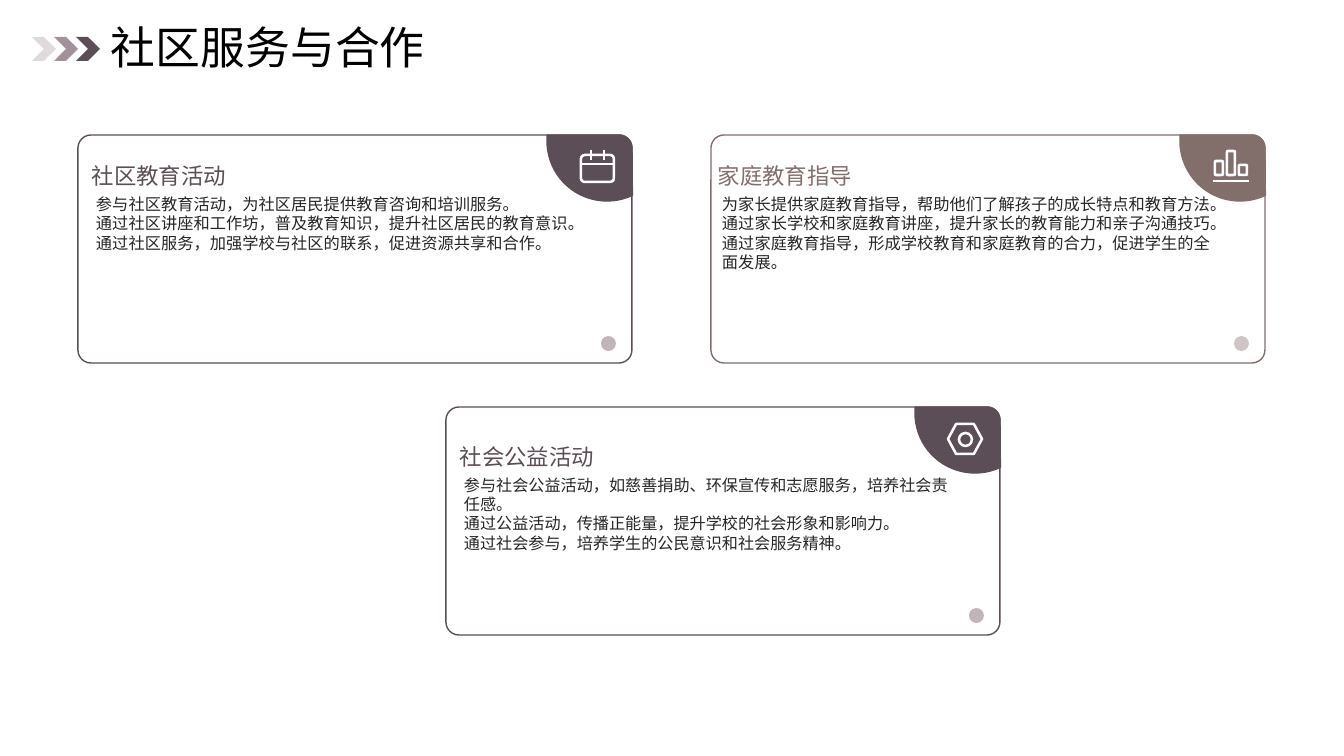
from dataclasses import dataclass
from math import cos, radians, sin

from lxml import etree
from pptx import Presentation
from pptx.dml.color import RGBColor
from pptx.enum.shapes import MSO_CONNECTOR, MSO_SHAPE
from pptx.enum.text import MSO_ANCHOR, MSO_AUTO_SIZE, PP_ALIGN
from pptx.oxml.ns import qn
from pptx.util import Pt

RECT, ROUND, OVAL = MSO_SHAPE.RECTANGLE, MSO_SHAPE.ROUNDED_RECTANGLE, MSO_SHAPE.OVAL
CHEVRON, HEXAGON = MSO_SHAPE.CHEVRON, MSO_SHAPE.HEXAGON
STRAIGHT = MSO_CONNECTOR.STRAIGHT
TOP, MIDDLE, BOTTOM = MSO_ANCHOR.TOP, MSO_ANCHOR.MIDDLE, MSO_ANCHOR.BOTTOM
LEFT, NO_FIT = PP_ALIGN.LEFT, MSO_AUTO_SIZE.NONE

EMU_PER_PX = 914400 / 100.8
CARD_W, CARD_H, RADIUS = 554, 228, 13
COMPARISON_LAYOUT = 4


@dataclass(frozen=True)
class Theme:
    font: str = "Noto Sans CJK SC"
    black: str = "000000"
    text: str = "262626"
    white: str = "FFFFFF"
    plum: str = "5C4E56"
    plum_mid: str = "A1919A"
    plum_soft: str = "C1B5BC"
    plum_pale: str = "E0DADD"
    brown: str = "826F6C"
    brown_soft: str = "CEC5C4"
    title_pt: float = 32
    heading_pt: float = 16
    body_pt: float = 11.6
    body_small_pt: float = 11.5
    border_pt: float = 1
    icon_pt: float = 1.8


THEME = Theme()


def px(n):
    return round(n * EMU_PER_PX)


def rgb(color):
    return RGBColor.from_string(color)


def paint(sp, fill=None, line=None, width=THEME.border_pt):
    sp.shadow.inherit = False
    if fill:
        sp.fill.solid()
        sp.fill.fore_color.rgb = rgb(fill)
    else:
        sp.fill.background()
    if line:
        sp.line.color.rgb = rgb(line)
        sp.line.width = Pt(width)
    else:
        sp.line.fill.background()


def add_shape(s, kind, box, fill=None, line=None, width=THEME.border_pt, adjust=None):
    sp = s.shapes.add_shape(kind, *map(px, box))
    paint(sp, fill, line, width)
    if adjust is not None:
        sp.adjustments[0] = adjust


def add_stroke(s, x1, y1, x2, y2):
    line = s.shapes.add_connector(STRAIGHT, px(x1), px(y1), px(x2), px(y2))
    line.line.color.rgb = rgb(THEME.white)
    line.line.width = Pt(THEME.icon_pt)
    etree.SubElement(line.element.spPr, qn("a:effectLst"))


def write(s, sp, box, lines, size, color, anchor):
    """Place a text shape on top and fill it, one paragraph per line."""
    sp.left, sp.top, sp.width, sp.height = map(px, box)
    s.shapes.element.append(sp.element)
    tf = sp.text_frame
    frame_format = {"word_wrap": True, "auto_size": NO_FIT, "vertical_anchor": anchor,
                    "margin_left": 0, "margin_top": 0, "margin_right": 0, "margin_bottom": 0}
    for name, value in frame_format.items():
        setattr(tf, name, value)
    tf.text = "\n".join(lines)
    for p in tf.paragraphs:
        for name, value in {"alignment": LEFT, "space_before": Pt(0), "line_spacing": 1.0}.items():
            setattr(p, name, value)
        pPr = p._p.get_or_add_pPr()
        pPr.set("marL", "0")
        pPr.set("indent", "0")
        etree.SubElement(pPr, qn("a:buNone"))
        for r in p.runs:
            for name, value in {"size": Pt(size), "bold": False, "name": THEME.font}.items():
                setattr(r.font, name, value)
            r.font.color.rgb = rgb(color)
            etree.SubElement(r._r.get_or_add_rPr(), qn("a:ea"), typeface=THEME.font)


def arc(cx, cy, radius, start, end, steps=24):
    angles = [radians(start + (end - start) * i / steps) for i in range(steps + 1)]
    return [(cx + radius * cos(a), cy + radius * sin(a)) for a in angles]


def add_corner(s, x, y, color):
    """Top right badge: the part of a disc that lies inside the card."""
    outline = [(469, 0)]
    outline += arc(CARD_W - RADIUS, RADIUS, RADIUS, -90, 0)
    outline += arc(529, 6, 60, 65, 180)
    points = [(px(x + dx), px(y + dy)) for dx, dy in outline]
    builder = s.shapes.build_freeform(*points[0])
    builder.add_line_segments(points[1:], close=True)
    paint(builder.convert_to_shape(), color, color)


def add_outline(s, kind, box, adjust=None):
    add_shape(s, kind, box, None, THEME.white, THEME.icon_pt, adjust)


def calendar_icon(s, x, y):
    add_outline(s, ROUND, (x + 503, y + 20, 33, 27), 0.14)
    add_stroke(s, x + 503, y + 29, x + 536, y + 29)
    for tick in (513, 526):
        add_stroke(s, x + tick, y + 15, x + tick, y + 25)


def bars_icon(s, x, y):
    for i, height in enumerate((14, 24, 10)):
        add_outline(s, ROUND, (x + 504 + 12 * i, y + 40 - height, 8, height), 0.1)
    add_stroke(s, x + 502, y + 46, x + 538, y + 46)


def nut_icon(s, x, y):
    add_outline(s, HEXAGON, (x + 502, y + 17, 34, 30), 0.27)
    add_outline(s, OVAL, (x + 513, y + 26, 13, 13))


def add_card(s, body, x, y, indent, drop, color, dot, icon, heading, lines, size):
    add_shape(s, ROUND, (x, y, CARD_W, CARD_H), THEME.white, color, adjust=RADIUS / CARD_H)
    add_corner(s, x, y, color)
    icon(s, x, y)
    add_shape(s, OVAL, (x + 523, y + 201, 15, 15), dot)
    left, top = x + indent, y + drop
    box = s.shapes.add_textbox(0, 0, 0, 0)
    write(s, box, (left, top, 433, 51), [heading], THEME.heading_pt, color, BOTTOM)
    write(s, body, (left + 4, top + 56, 494, 150), lines, size, THEME.text, TOP)


CARDS = [
    (78, 135, 14, 3, THEME.plum, THEME.plum_soft, calendar_icon, "社区教育活动",
     ["参与社区教育活动，为社区居民提供教育咨询和培训服务。",
      "通过社区讲座和工作坊，普及教育知识，提升社区居民的教育意识。",
      "通过社区服务，加强学校与社区的联系，促进资源共享和合作。"], THEME.body_pt),
    (711, 135, 7, 3, THEME.brown, THEME.brown_soft, bars_icon, "家庭教育指导",
     ["为家长提供家庭教育指导，帮助他们了解孩子的成长特点和教育方法。",
      "通过家长学校和家庭教育讲座，提升家长的教育能力和亲子沟通技巧。",
      "通过家庭教育指导，形成学校教育和家庭教育的合力，促进学生的全面发展。"], THEME.body_pt),
    (446, 407, 14, 12, THEME.plum, THEME.plum_soft, nut_icon, "社会公益活动",
     ["参与社会公益活动，如慈善捐助、环保宣传和志愿服务，培养社会责任感。",
      "通过公益活动，传播正能量，提升学校的社会形象和影响力。",
      "通过社会参与，培养学生的公民意识和社会服务精神。"], THEME.body_small_pt),
]


def main():
    prs = Presentation()
    prs.slide_width, prs.slide_height = px(1344), px(756)
    s = prs.slides.add_slide(prs.slide_layouts[COMPARISON_LAYOUT])
    title, *bodies = list(s.placeholders)

    # Title with three chevrons
    write(s, title, (111, 23, 1179, 47), ["社区服务与合作"], THEME.title_pt, THEME.black, MIDDLE)
    for i, color in enumerate((THEME.plum_pale, THEME.plum_mid, THEME.plum)):
        add_shape(s, CHEVRON, (32 + 22 * i, 37, 24, 24), color)

    # Cards, each with a list placeholder
    for body, card in zip(bodies, CARDS):
        add_card(s, body, *card)

    # Unused placeholders
    for body in bodies[len(CARDS):]:
        body.element.getparent().remove(body.element)

    prs.save("out.pptx")


if __name__ == "__main__":
    main()
